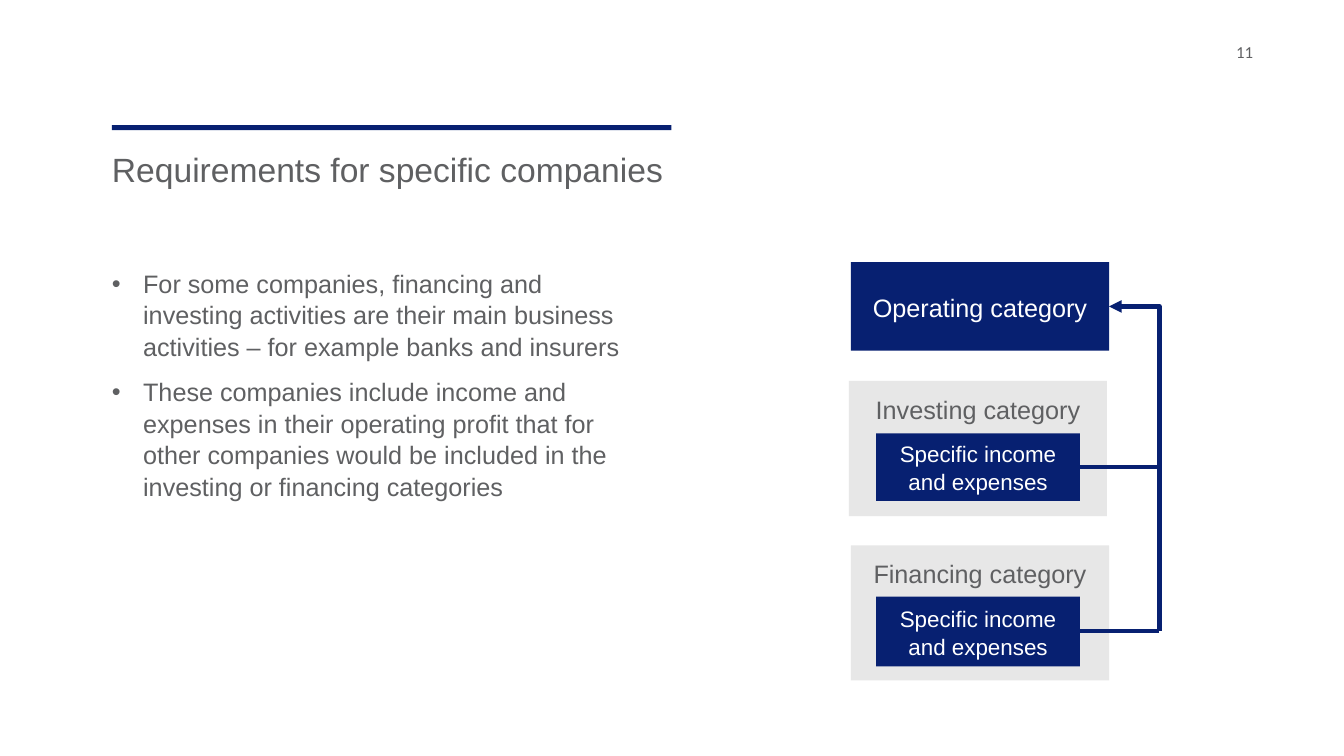
from pptx import Presentation
from pptx.dml.color import RGBColor
from pptx.enum.shapes import MSO_CONNECTOR as CONN, MSO_SHAPE as SHAPE
from pptx.enum.text import MSO_ANCHOR as ANCHOR, MSO_AUTO_SIZE as AUTO, PP_ALIGN as ALIGN
from pptx.oxml.ns import qn
from pptx.util import Pt
from lxml.etree import SubElement

PX = 9144  # 100 px to the inch
NAVY, GREY, PALE, WHITE = "072071", "5F6062", "E7E7E7", "FFFFFF"
BULLETS = [
    "For some companies, financing and investing activities are their main "
    "business activities – for example banks and insurers",
    "These companies include income and expenses in their operating profit that "
    "for other companies would be included in the investing or financing categories",
]


def px(*lengths):
    return [n * PX for n in lengths]


def rgb(value):
    return RGBColor.from_string(value)


def style(p, size, color, align=ALIGN.LEFT, name="Arial"):
    p.alignment = align
    for r in p.runs:
        r.font.size, r.font.name = Pt(size), name
        r.font.color.rgb = rgb(color)


def place(sp, box):
    sp.left, sp.top, sp.width, sp.height = px(*box)


def add_box(s, box, fill, text="", size=18, color=WHITE, anchor=ANCHOR.MIDDLE, pad=12):
    sp = s.shapes.add_shape(SHAPE.RECTANGLE, *px(*box))
    sp.shadow.inherit = False
    sp.fill.solid()
    sp.fill.fore_color.rgb = rgb(fill)
    sp.line.fill.background()
    if text:
        tf = sp.text_frame
        tf.word_wrap, tf.vertical_anchor = True, anchor
        tf.margin_left, tf.margin_right, tf.margin_top, tf.margin_bottom = px(10, 10, pad, pad)
        p = tf.paragraphs[0]
        p.text = text
        p.line_spacing = 1.04
        style(p, size, color, ALIGN.CENTER)
    return sp


def add_line(s, kind, x1, y1, x2, y2):
    line = s.shapes.add_connector(kind, *px(x1, y1, x2, y2))
    line.line.color.rgb = rgb(NAVY)
    line.line.width = Pt(3)
    SubElement(line._element.spPr, qn("a:effectLst"))
    return line


def add_header(s, x, y):
    """Rule and title, with the page number at the top right."""
    add_box(s, (x, y, 555, 5), NAVY)
    title = s.shapes.title
    place(title, (x - 10, y + 19, 1112, 84))
    tf = title.text_frame
    tf.text = "Requirements for specific companies"
    tf.auto_size, tf.vertical_anchor = AUTO.NONE, ANCHOR.TOP
    style(tf.paragraphs[0], 24, GREY)

    number = s.shapes.add_textbox(*px(1226, 41, 67, 29))
    tf = number.text_frame
    tf.word_wrap = True
    tf.margin_left = tf.margin_right = tf.margin_top = tf.margin_bottom = 0
    tf.text = "11"
    style(tf.paragraphs[0], 12, GREY, name="Calibri")


def add_bullets(s, box):
    body = s.placeholders[1]
    place(body, box)
    tf = body.text_frame
    tf.text = "\n".join(BULLETS)
    tf.auto_size = AUTO.NONE
    for i, p in enumerate(tf.paragraphs):
        p.space_before = Pt(10 if i else 0)
        p.line_spacing = 1.04
        pPr = p._p.get_or_add_pPr()
        pPr.set("marL", str(31 * PX))
        pPr.set("indent", str(-31 * PX))
        SubElement(pPr, qn("a:buChar")).set("char", "•")
        style(p, 18, GREY)


def add_categories(s, x, y):
    """Category boxes, whose specific items are led up to the operating one."""
    w, bus = 256, x + 306
    add_box(s, (x, y, w, 88), NAVY, "Operating category")
    for name, left, top, inner_top, inner_h in (
        ("Investing category", x - 2, y + 118, y + 170, 67),
        ("Financing category", x, y + 281, y + 332, 69),
    ):
        add_box(s, (left, top, w, 134), PALE, name, color=GREY, anchor=ANCHOR.TOP)
        add_box(s, (x + 25, inner_top, 202, inner_h), NAVY,
                "Specific income and expenses", 16, pad=5)
        middle = inner_top + inner_h // 2
        add_line(s, CONN.STRAIGHT, x + 227, middle, bus, middle)

    elbow = add_line(s, CONN.ELBOW, x + w, y + 44, bus, middle)
    elbow._element.spPr.find(qn("a:prstGeom")).set("prst", "bentConnector2")
    SubElement(elbow.line._get_or_add_ln(), qn("a:headEnd")).set("type", "triangle")


def main():
    prs = Presentation()
    prs.slide_width, prs.slide_height = px(1333, 750)
    s = prs.slides.add_slide(prs.slide_layouts[1])
    add_header(s, 111, 124)
    add_bullets(s, (101, 260, 546, 371))
    add_categories(s, 844, 260)
    prs.save("out.pptx")


if __name__ == "__main__":
    main()
